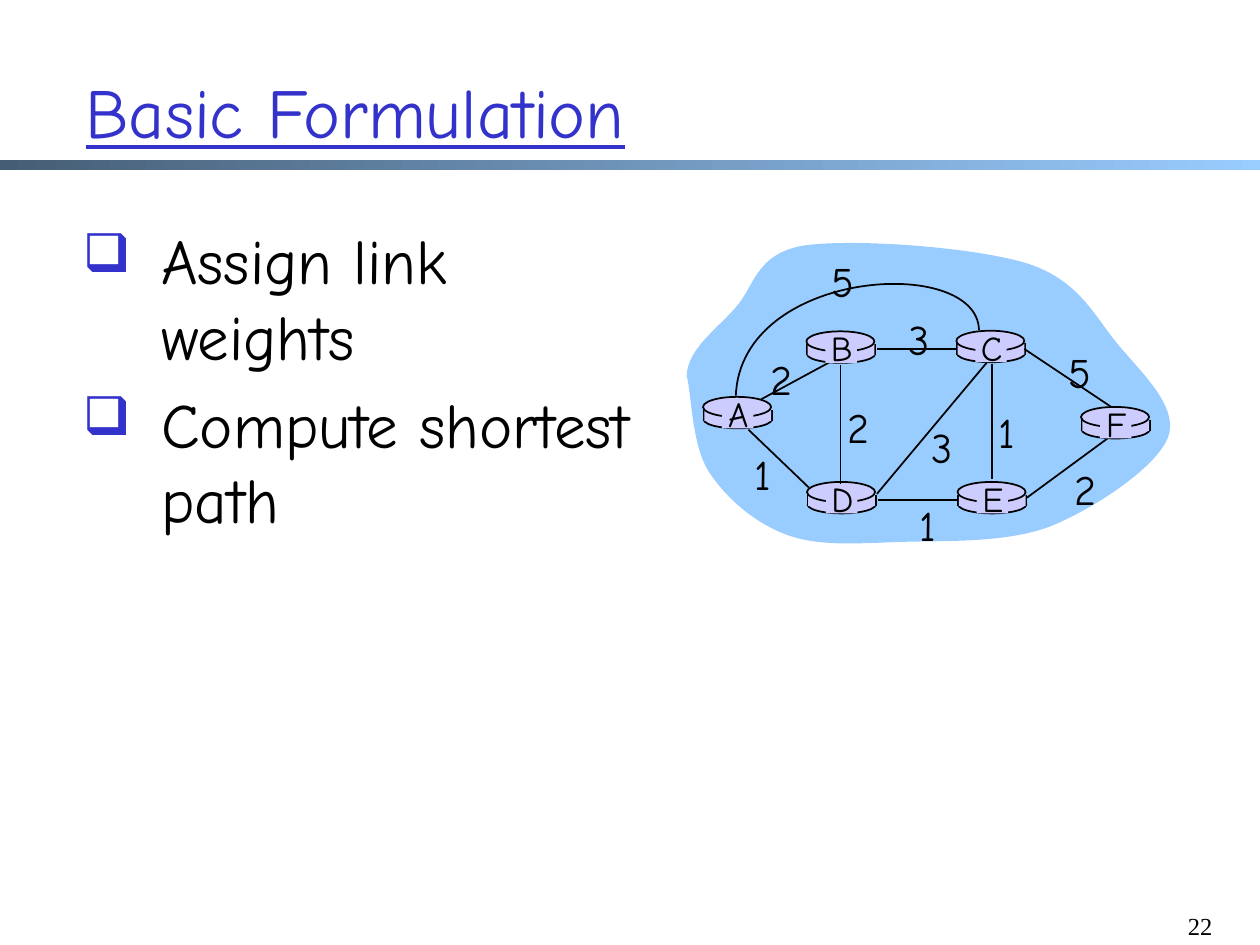
from lxml.etree import SubElement
from pptx import Presentation
from pptx.dml.color import RGBColor
from pptx.enum.shapes import MSO_CONNECTOR, MSO_SHAPE
from pptx.enum.text import MSO_ANCHOR, MSO_AUTO_SIZE, PP_ALIGN
from pptx.oxml.ns import qn
from pptx.util import Inches, Pt

COLS, ROWS = 100, 75
HEX = {"ink": "000000", "title": "3333CC", "cloud": "99CCFF",
       "node": "CCCCFF", "dark": "465E75"}
FONT, SERIF, SIGNS = "Comic Neue", "Times New Roman", "OpenSymbol"

# Top left corner of each router, in columns and rows
NODES = {"A": (55.8, 31.5), "B": (64, 26.3), "C": (75.9, 26.25),
         "D": (64.05, 38.25), "E": (76, 38.25), "F": (85.8, 32.3)}
LINKS = [((78.75, 28.9), (78.75, 38)), ((66.7, 29), (66.7, 38.4)),
         ((69.6, 39.2), (78.3, 28.8)), ((81.5, 39.5), (87.9, 34.8)),
         ((76, 39.7), (69.7, 39.7)), ((64.2, 38.7), (59.4, 34.1)),
         ((75.9, 27.7), (69.6, 27.7)), ((88.2, 32.3), (81.3, 27.7))]
# Top centre of each link weight
COSTS = [("2", 61.95, 27.6), ("2", 68.05, 31.4), ("1", 60.5, 35.1),
         ("3", 74.7, 33), ("1", 73.6, 39.15), ("1", 79.9, 31.75),
         ("2", 86.05, 36.3), ("5", 85.6, 27), ("3", 72.85, 24.4),
         ("5", 66.75, 19.8)]
# Each curve is a start point followed by Bezier triples
ARC = [(77.7, 26.2), (77.6, 20.2), (58.8, 21.3), (58.4, 31.4)]
CLOUD = [(54.5, 29.8), (54.6, 27.7), (56.8, 26.2), (58.3, 24.5),
         (59.9, 22.8), (59.9, 20.2), (63.7, 19.5),
         (67.6, 18.9), (77.3, 19.6), (81.5, 20.9),
         (85.6, 22.2), (86.8, 25), (88.7, 27.3),
         (90.6, 29.6), (93.6, 32.3), (92.7, 34.7),
         (91.8, 37.1), (86.8, 40.4), (83.3, 41.8),
         (79.8, 43.1), (75.2, 42.9), (71.8, 43),
         (68.3, 43.1), (65.2, 43.4), (62.6, 42.5),
         (60, 41.6), (57.7, 39.6), (56.3, 37.5),
         (54.9, 35.4), (54.9, 31.4), (54.5, 29.8)]


def bend(shape):
    """Turn each three straight segments into one cubic Bezier segment."""
    legs = list(shape._element.iter(qn("a:lnTo")))
    for i in range(0, len(legs), 3):
        trio = legs[i:i + 3]
        track = trio[0].getparent()
        cubic = SubElement(track, qn("a:cubicBezTo"))
        trio[0].addprevious(cubic)
        for leg in trio:
            cubic.append(leg[0])
            track.remove(leg)


class Deck:
    def __init__(self):
        self.prs = Presentation()
        self.prs.slide_width, self.prs.slide_height = Inches(10), Inches(7.5)
        self.slide = self.prs.slides.add_slide(self.prs.slide_layouts[5])
        self.shapes = self.slide.shapes

    def unit(self, col, row):
        return (round(self.prs.slide_width * col / COLS),
                round(self.prs.slide_height * row / ROWS))

    def tint(self, name):
        return RGBColor.from_string(HEX[name])

    def style(self, para, text, size, color="ink", font=FONT, align=PP_ALIGN.LEFT):
        para.text, para.alignment = text, align
        para.font.name, para.font.size = font, Pt(size)
        para.font.color.rgb = self.tint(color)

    def paint(self, shape, fill=None, line=False):
        shape.shadow.inherit = False
        if fill:
            shape.fill.solid()
            shape.fill.fore_color.rgb = self.tint(fill)
        else:
            shape.fill.background()
        if line:
            shape.line.color.rgb, shape.line.width = self.tint("ink"), Pt(1)
        else:
            shape.line.fill.background()

    def title(self, text, col, row, wide, high):
        box = self.shapes.title
        box.left, box.top = self.unit(col, row)
        box.width, box.height = self.unit(wide, high)
        frame = box.text_frame
        frame.auto_size = MSO_AUTO_SIZE.NONE
        frame.vertical_anchor = MSO_ANCHOR.MIDDLE
        self.style(frame.paragraphs[0], text, 40, "title")
        frame.paragraphs[0].font.underline = True

    def shape(self, kind, col, row, wide, high, fill, line=False):
        item = self.shapes.add_shape(kind, *self.unit(col, row), *self.unit(wide, high))
        self.paint(item, fill, line)
        return item

    def bar(self, *area):
        fill = self.shape(MSO_SHAPE.RECTANGLE, *area, "dark").fill
        fill.gradient()
        fill.gradient_angle = 0
        for stop, name, pos in zip(fill.gradient_stops, ("dark", "cloud"), (0, 1)):
            stop.color.rgb, stop.position = self.tint(name), pos

    def text(self, text, col, row, wide, high, size, wrap=False, **look):
        box = self.shapes.add_textbox(*self.unit(col, row), *self.unit(wide, high))
        box.text_frame.word_wrap = wrap
        self.style(box.text_frame.paragraphs[0], text, size, **look)

    def list(self, items, col, row, wide, high):
        box = self.shapes.add_textbox(*self.unit(col, row), *self.unit(wide, high))
        frame = box.text_frame
        frame.word_wrap = True
        for i, item in enumerate(items):
            para = frame.add_paragraph() if i else frame.paragraphs[0]
            self.style(para, item, 36)
            para.space_before = Pt(7.2)
            props = para._p.get_or_add_pPr()
            props.set("marL", str(Inches(0.62)))
            props.set("indent", str(-Inches(0.62)))
            tint = SubElement(props, qn("a:buClr"))
            SubElement(tint, qn("a:srgbClr"), val=HEX["title"])
            SubElement(props, qn("a:buSzPct"), val="85000")
            SubElement(props, qn("a:buFont"), typeface=SIGNS)
            SubElement(props, qn("a:buChar"), char="❑")
            # Bullet marks must come before the default run format
            props.append(props.find(qn("a:defRPr")))

    def line(self, start, end):
        link = self.shapes.add_connector(MSO_CONNECTOR.STRAIGHT,
                                         *self.unit(*start), *self.unit(*end))
        link.line.color.rgb, link.line.width = self.tint("ink"), Pt(1)
        SubElement(link._element.spPr, qn("a:effectLst"))

    def curve(self, pts, fill=None, line=False):
        first, *rest = [self.unit(*p) for p in pts]
        pen = self.shapes.build_freeform(*first)
        pen.add_line_segments(rest, close=bool(fill))
        item = pen.convert_to_shape()
        bend(item)
        self.paint(item, fill, line)

    def router(self, col, row):
        self.shape(MSO_SHAPE.OVAL, col + 0.05, row + 1.1, 5.4, 1.4, "node", True)
        for side in (col + 0.05, col + 5.45):
            self.line((side, row + 1), (side, row + 1.9))
        self.shape(MSO_SHAPE.RECTANGLE, col + 0.1, row + 1, 5.3, 0.9, "node")
        self.shape(MSO_SHAPE.OVAL, col, row, 5.4, 1.6, "node", True)

    def name(self, text, col, row):
        self.shape(MSO_SHAPE.RECTANGLE, col + 1.5, row + 0.2, 2.5, 2.3, "node")
        self.text(text, col + 0.8, row - 0.85, 4, 4.3, 20, align=PP_ALIGN.CENTER)


def main():
    deck = Deck()
    deck.bar(0, 12.7, 100, 0.8)
    deck.text("22", 92.5, 71.8, 4.7, 3.2, 14, wrap=True, font=SERIF,
              align=PP_ALIGN.RIGHT)
    deck.title("Basic Formulation", 5.8, 2.5, 87.8, 12.5)
    deck.list(["Assign link weights", "Compute shortest path"], 5.6, 17.1, 46.8, 38)
    deck.curve(CLOUD, fill="cloud")
    deck.line((60.4, 31.7), (66.3, 28.5))
    for spot in NODES.values():
        deck.router(*spot)
    for ends in LINKS:
        deck.line(*ends)
    deck.curve(ARC, line=True)
    for name, spot in NODES.items():
        deck.name(name, *spot)
    for cost, mid, top in COSTS:
        deck.text(cost, mid - 1.75, top, 3.5, 4, 24, align=PP_ALIGN.CENTER)
    deck.prs.save("out.pptx")


if __name__ == "__main__":
    main()
